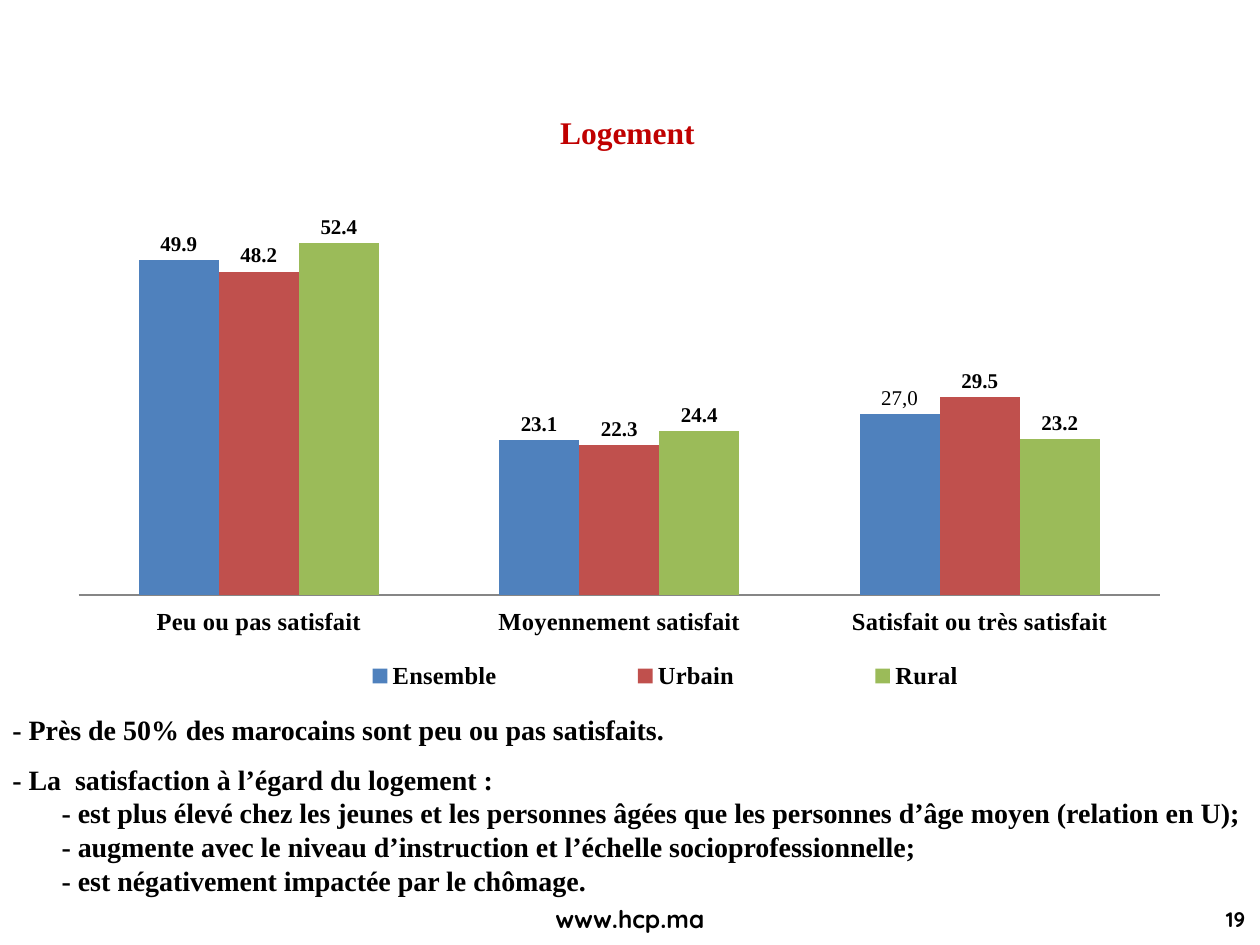
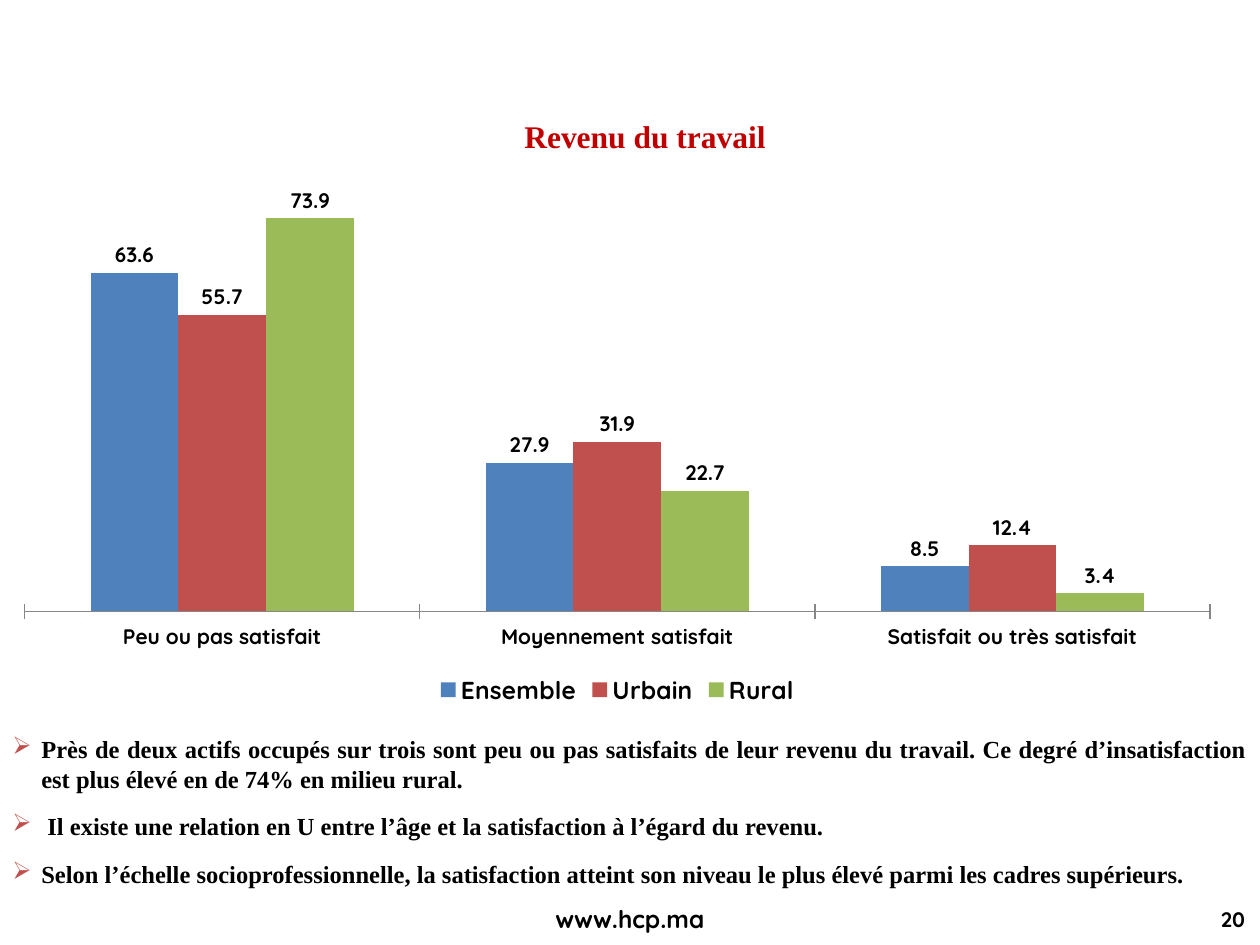
from dataclasses import dataclass

from lxml.etree import SubElement
from pptx import Presentation
from pptx.chart.data import CategoryChartData
from pptx.dml.color import RGBColor
from pptx.enum.chart import XL_CHART_TYPE as ChartType
from pptx.enum.chart import XL_LABEL_POSITION as LabelPosition
from pptx.enum.chart import XL_LEGEND_POSITION as LegendPosition
from pptx.enum.chart import XL_TICK_LABEL_POSITION as TickLabels
from pptx.enum.chart import XL_TICK_MARK as TickMark
from pptx.enum.text import MSO_ANCHOR as Anchor
from pptx.enum.text import PP_ALIGN as Align
from pptx.oxml.ns import qn
from pptx.util import Inches, Pt


@dataclass(frozen=True)
class Theme:
    ink: str = "000000"
    title: str = "C00000"
    bullet: str = "C0504D"
    axis: str = "868686"
    series: tuple = ("4F81BD", "C0504D", "9BBB59")
    serif: str = "Times New Roman"
    sans: str = "Quicksand"
    title_size: int = 18
    findings_size: int = 16
    body_size: int = 14
    small_size: int = 12
    chart_size: int = 10


@dataclass(frozen=True)
class Box:
    """An area in percent of the slide's width and height."""
    left: float
    top: float
    width: float
    height: float

    def place(self):
        across, down = WIDTH / 100, HEIGHT / 100
        return (int(self.left * across), int(self.top * down),
                int(self.width * across), int(self.height * down))


@dataclass(frozen=True)
class SatisfactionChart:
    values: dict
    maximum: int
    plot: tuple
    font: str
    category_size: int
    tick: TickMark
    axis_width: float
    legend: tuple = ()


THEME = Theme()
WIDTH, HEIGHT = Inches(10), Inches(7.5)
LEVELS = ("Peu ou pas satisfait", "Moyennement satisfait", "Satisfait ou très satisfait")
FOOTER = Box(38.2, 95, 23.6, 4.4)
NUMBER = Box(84.6, 95, 15.2, 4.6)

HOUSING = SatisfactionChart(
    {"Ensemble": (49.9, 23.1, 27), "Urbain": (48.2, 22.3, 29.5), "Rural": (52.4, 24.4, 23.2)},
    maximum=60, plot=(0.03, 0.1, 0.94, 0.7), font=THEME.serif,
    category_size=THEME.body_size, tick=TickMark.NONE, axis_width=1.25,
    legend=(0.17, 0.9, 0.74, 0.08))
INCOME = SatisfactionChart(
    {"Ensemble": (63.6, 27.9, 8.5), "Urbain": (55.7, 31.9, 12.4), "Rural": (73.9, 22.7, 3.4)},
    maximum=80, plot=(0.02, 0.02, 0.96, 0.795), font=THEME.sans,
    category_size=THEME.small_size, tick=TickMark.CROSS, axis_width=0.75)

# (indent level, space before in points, wording)
HOUSING_FINDINGS = (
    (0, 0, "- Près de 50% des marocains sont peu ou pas satisfaits."),
    (0, 9.4, "- La  satisfaction à l’égard du logement :"),
    (1, 0, "- est plus élevé chez les jeunes et les personnes âgées que les personnes "
           "d’âge moyen (relation en U);"),
    (1, 0, "- augmente avec le niveau d’instruction et l’échelle socioprofessionnelle;"),
    (1, 0, "- est négativement impactée par le chômage."),
)
INCOME_FINDINGS = (
    "Près de deux actifs occupés sur trois sont peu ou pas satisfaits de leur revenu du "
    "travail. Ce degré d’insatisfaction est plus élevé en de 74% en milieu rural.",
    " Il existe une relation en U entre l’âge et la satisfaction à l’égard du revenu.",
    "Selon l’échelle socioprofessionnelle, la satisfaction atteint son niveau le plus "
    "élevé parmi les cadres supérieurs.",
)


def style(font, name, size, color=THEME.ink, bold=True):
    font.name, font.size, font.bold = name, Pt(size), bold
    font.color.rgb = RGBColor.from_string(color)


def text_frame(slide, box):
    frame = slide.shapes.add_textbox(*box.place()).text_frame
    frame.word_wrap = True
    frame.vertical_anchor = Anchor.MIDDLE
    return frame


def paragraphs(frame, count):
    return [frame.paragraphs[0]] + [frame.add_paragraph() for _ in range(count - 1)]


def write(paragraph, text, *look):
    run = paragraph.add_run()
    run.text = text
    style(run.font, *look)


def add_line(slide, box, text, align, *look):
    paragraph = text_frame(slide, box).paragraphs[0]
    paragraph.alignment = align
    write(paragraph, text, *look)


def add_frame(slide, title, title_box, number):
    """Title, web address and page number, as on every slide."""
    add_line(slide, title_box, title, Align.CENTER, THEME.serif, THEME.title_size, THEME.title)
    add_line(slide, FOOTER, "www.hcp.ma", Align.CENTER, THEME.sans, THEME.body_size)
    add_line(slide, NUMBER, str(number), Align.RIGHT, THEME.sans, THEME.small_size)


def set_layout(parent, index, shares, inner=False):
    """Fix a chart part at x, y, w, h, given as shares of the chart."""
    previous = parent.find(qn("c:layout"))
    if previous is not None:
        parent.remove(previous)
    layout = parent.makeelement(qn("c:layout"), {})
    parent.insert(index, layout)
    manual = SubElement(layout, qn("c:manualLayout"))
    settings = [("layoutTarget", "inner")] if inner else []
    settings += [("xMode", "edge"), ("yMode", "edge"), *zip("xywh", shares)]
    for tag, value in settings:
        SubElement(manual, qn(f"c:{tag}")).set("val", str(value))


def add_satisfaction_chart(slide, box, content):
    data = CategoryChartData()
    data.categories = LEVELS
    for name, values in content.values.items():
        data.add_series(name, values)
    chart = slide.shapes.add_chart(ChartType.COLUMN_CLUSTERED, *box.place(), data).chart
    chart.has_title = False
    style(chart.font, THEME.sans, THEME.chart_size, bold=False)

    levels = chart.category_axis
    levels.major_tick_mark, levels.minor_tick_mark = content.tick, TickMark.NONE
    levels.tick_label_position = TickLabels.LOW
    levels.format.line.color.rgb = RGBColor.from_string(THEME.axis)
    levels.format.line.width = Pt(content.axis_width)
    style(levels.tick_labels.font, content.font, content.category_size)

    percent = chart.value_axis
    percent.minimum_scale, percent.maximum_scale = 0, content.maximum
    percent.has_major_gridlines = False
    percent.visible = False

    columns = chart.plots[0]
    columns.gap_width, columns.overlap, columns.vary_by_categories = 150, 0, False
    set_layout(columns._element.getparent(), 0, content.plot, inner=True)
    for series, color in zip(columns.series, THEME.series):
        series.format.fill.solid()
        series.format.fill.fore_color.rgb = RGBColor.from_string(color)
        labels = series.data_labels
        labels.show_value = True
        labels.position = LabelPosition.OUTSIDE_END
        style(labels.font, content.font, THEME.small_size)

    chart.has_legend = True
    legend = chart.legend
    legend.position, legend.include_in_layout = LegendPosition.BOTTOM, False
    style(legend.font, content.font, THEME.body_size)
    if content.legend:
        set_layout(legend._element, 1, content.legend)
    return chart


def add_dashed_findings(slide, box):
    frame = text_frame(slide, box)
    frame.margin_right = 0
    lines = paragraphs(frame, len(HOUSING_FINDINGS))
    for line, (level, before, text) in zip(lines, HOUSING_FINDINGS):
        line._p.get_or_add_pPr().set("marL", str(int(level * WIDTH * 0.039)))
        line.line_spacing = Pt(19.2)
        line.space_before = Pt(before)
        write(line, text, THEME.serif, THEME.findings_size)


def add_bulleted_findings(slide, box):
    frame = text_frame(slide, box)
    hanging = int(WIDTH * 0.023)
    lines = paragraphs(frame, len(INCOME_FINDINGS))
    for index, (line, text) in enumerate(zip(lines, INCOME_FINDINGS)):
        line.alignment = Align.JUSTIFY
        line.space_before = Pt(10.5 if index else 0)
        properties = line._p.get_or_add_pPr()
        properties.set("marL", str(hanging))
        properties.set("indent", str(-hanging))
        color = SubElement(properties, qn("a:buClr"))
        SubElement(color, qn("a:srgbClr")).set("val", THEME.bullet)
        SubElement(properties, qn("a:buChar")).set("char", "➢")
        write(line, text, THEME.serif, THEME.body_size)


def build_housing(slide):
    add_frame(slide, "Logement", Box(3.6, 11.5, 92.4, 4.9), 19)
    add_dashed_findings(slide, Box(0, 75.2, 100, 19.87))
    chart = add_satisfaction_chart(slide, Box(3.5, 14.27, 91.3, 60.93), HOUSING)
    satisfied = chart.plots[0].series[0].points[2].data_label
    write(satisfied.text_frame.paragraphs[0], "27,0",
          THEME.serif, THEME.small_size, THEME.ink, False)
    satisfied.position = LabelPosition.OUTSIDE_END


def build_income(slide):
    add_frame(slide, "Revenu du travail", Box(13, 11.2, 76.4, 6.3), 20)
    add_bulleted_findings(slide, Box(0, 78, 100, 15.73))
    add_satisfaction_chart(slide, Box(0, 18.53, 98, 56.67), INCOME)


def main():
    deck = Presentation()
    deck.slide_width, deck.slide_height = WIDTH, HEIGHT
    blank = deck.slide_layouts[6]
    for build in (build_housing, build_income):
        build(deck.slides.add_slide(blank))
    deck.save("out.pptx")


if __name__ == "__main__":
    main()
